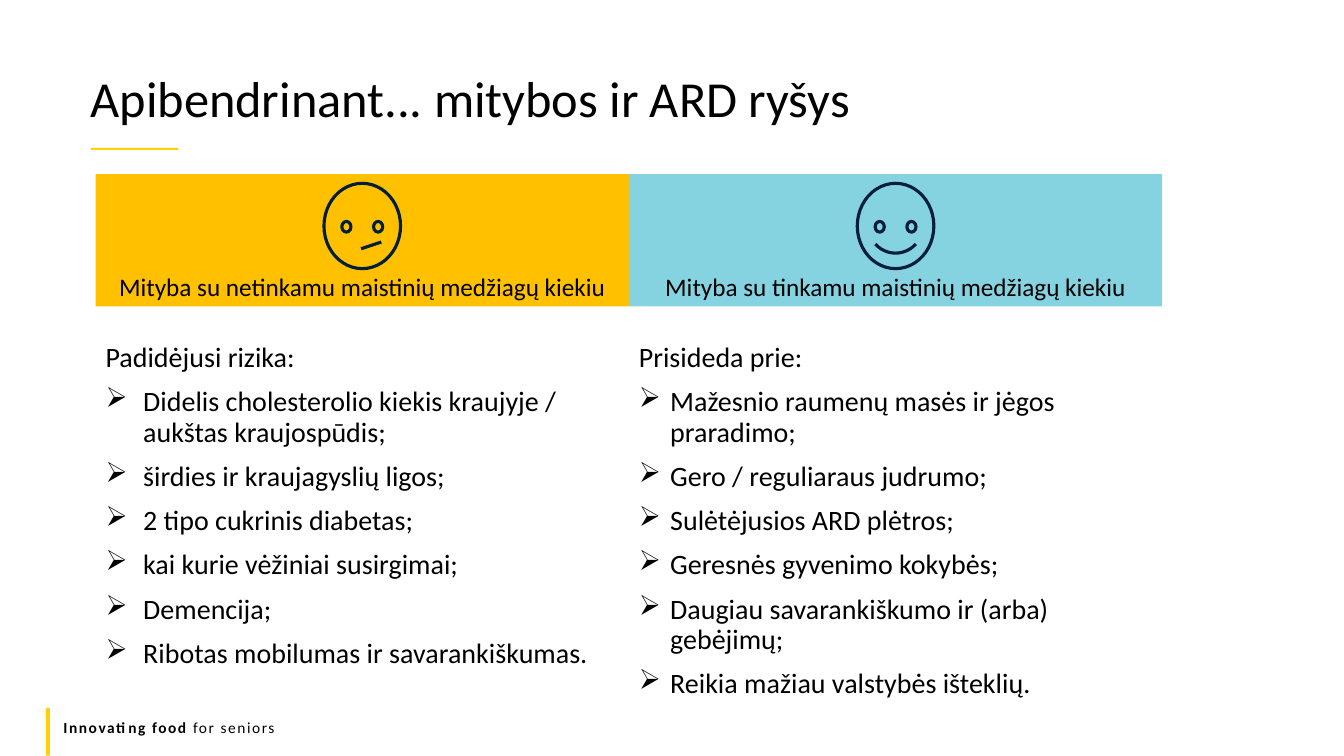
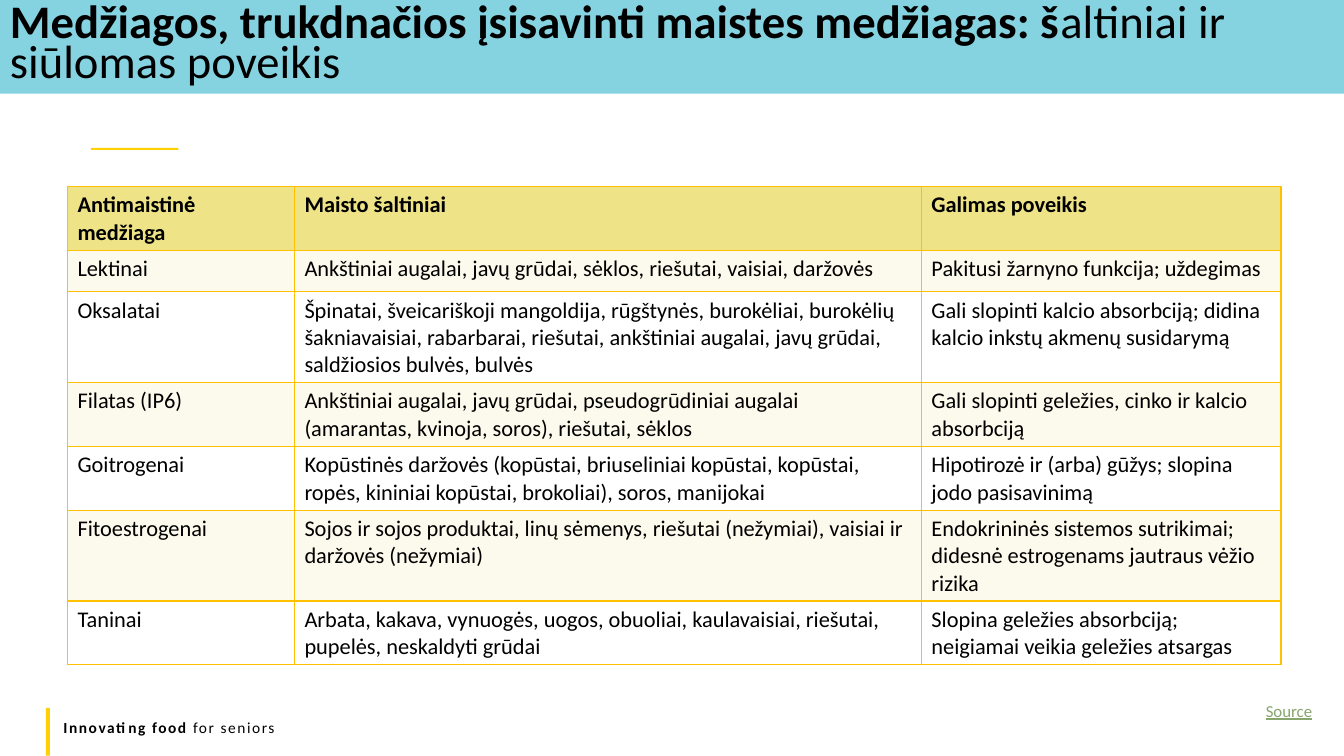
from math import cos, pi, sin

from lxml.etree import SubElement
from pptx import Presentation
from pptx.dml.color import RGBColor
from pptx.enum.shapes import MSO_SHAPE
from pptx.enum.text import MSO_ANCHOR, PP_ALIGN
from pptx.oxml.ns import qn
from pptx.util import Cm, Pt

FONT = "Calibri"
COLORS = {
    "text": "000000", "accent": "FFD100", "amber": "FFC000", "aqua": "85D2E1",
    "ink": "011E3B", "link": "87A66E", "header": "EEE387", "band": "FCFAED",
    "white": "FFFFFF",
}
RGB = {name: RGBColor.from_string(value) for name, value in COLORS.items()}


def add_box(s, box, fill=None, anchor=MSO_ANCHOR.TOP):
    """Add a text box, or a filled rectangle; box is left, top, width, height in cm."""
    box = [Cm(v) for v in box]
    if fill:
        sp = s.shapes.add_shape(MSO_SHAPE.RECTANGLE, *box)
        sp.shadow.inherit = False
        sp.fill.solid()
        sp.fill.fore_color.rgb = RGB[fill]
        sp.line.fill.background()
    else:
        sp = s.shapes.add_textbox(*box)
    sp.text_frame.word_wrap = True
    sp.text_frame.vertical_anchor = anchor
    return sp


def write(p, runs, size, color="text", spacing=None, **layout):
    """Fill a paragraph from (text, run format) pairs; layout sets paragraph attributes."""
    for name, value in {"alignment": PP_ALIGN.LEFT, **layout}.items():
        setattr(p, name, value)
    for text, fmt in runs:
        r = p.add_run()
        r.text = text
        for name, value in {"name": FONT, "size": Pt(size), **fmt}.items():
            setattr(r.font, name, value)
        r.font.color.rgb = RGB[color]
        if spacing:
            r._r.get_or_add_rPr().set("spc", str(spacing))


prs = Presentation()
prs.slide_width, prs.slide_height = Cm(33.87), Cm(19.05)
slides = [prs.slides.add_slide(prs.slide_layouts[6]) for _ in range(2)]

# Shared title rule and footer
for s in slides:
    add_box(s, (2.29, 3.73, 2.21, 0.05), "accent")
    add_box(s, (1.16, 17.84, 0.1, 1.2), "accent")
    footer = add_box(s, (1.35, 17.96, 30.48, 0.74))
    write(footer.text_frame.paragraphs[0],
          [("Innovating food ", {"bold": True}), ("for seniors", {})], 11, spacing=110)

# Slide titles
titles = [
    ((2.03, 1.78, 29.44, 1.63), None, 36, 0.8,
     [("Apibendrinant... mitybos ir ARD ryšys", {})]),
    ((0, 0, 33.87, 2.36), "aqua", 33.3, 0.7,
     [("Medžiagos, trukdnačios įsisavinti maistes medžiagas: š", {"bold": True}),
      ("altiniai ir siūlomas poveikis", {})]),
]
for s, (box, fill, size, line_spacing, runs) in zip(slides, titles):
    title = add_box(s, box, fill, MSO_ANCHOR.MIDDLE)
    write(title.text_frame.paragraphs[0], runs, size, line_spacing=line_spacing)

# Slide 1: two columns, each with a face, a heading and a list
s = slides[0]
COL_LEFT, COL_WIDTH = 2.41, 13.44
skewed_mouth = [(-0.03, 6.27), (0.48, 6.1)]
SMILE_RADIUS, SMILE_CENTRE = 0.68, 5.7
smile_angles = [pi * (0.23 + 0.54 * i / 12) for i in range(13)]
smile = [(SMILE_RADIUS * cos(a), SMILE_CENTRE + SMILE_RADIUS * sin(a)) for a in smile_angles]
columns = [
    ("amber", skewed_mouth, 0.95, "Mityba su netinkamu maistinių medžiagų kiekiu",
     "Padidėjusi rizika:",
     ["Didelis cholesterolio kiekis kraujyje / aukštas kraujospūdis;",
      "širdies ir kraujagyslių ligos;",
      "2 tipo cukrinis diabetas;",
      "kai kurie vėžiniai susirgimai;",
      "Demencija;",
      "Ribotas mobilumas ir savarankiškumas."]),
    ("aqua", smile, 0.79, "Mityba su tinkamu maistinių medžiagų kiekiu",
     "Prisideda prie:",
     ["Mažesnio raumenų masės ir jėgos praradimo;",
      "Gero / reguliaraus judrumo;",
      "Sulėtėjusios ARD plėtros;",
      "Geresnės gyvenimo kokybės;",
      "Daugiau savarankiškumo ir (arba) gebėjimų;",
      "Reikia mažiau valstybės išteklių."]),
]
for i, (fill, mouth, indent, heading, lead, items) in enumerate(columns):
    left = COL_LEFT + i * COL_WIDTH
    centre = left + COL_WIDTH / 2

    header = add_box(s, (left, 4.39, COL_WIDTH, 3.33), fill, MSO_ANCHOR.BOTTOM)
    write(header.text_frame.paragraphs[0], [(heading, {})], 18, alignment=PP_ALIGN.CENTER)

    face = [s.shapes.add_shape(MSO_SHAPE.OVAL, Cm(centre + dx - w / 2), Cm(y), Cm(w), Cm(h))
            for dx, y, w, h in [(0, 4.62, 1.93, 2.15),
                                (-0.4, 5.58, 0.23, 0.27), (0.4, 5.58, 0.23, 0.27)]]
    points = [(Cm(centre + dx), Cm(y)) for dx, y in mouth]
    outline = s.shapes.build_freeform(*points[0])
    outline.add_line_segments(points[1:], close=False)
    face.append(outline.convert_to_shape())
    for sp in face:
        sp.shadow.inherit = False
        sp.fill.background()
        sp.line.color.rgb = RGB["ink"]
        sp.line.width = Pt(2.25)

    tf = add_box(s, (left, 8.53, COL_WIDTH, 9.4)).text_frame
    write(tf.paragraphs[0], [(lead, {})], 20, line_spacing=0.9)
    for item in items:
        p = tf.add_paragraph()
        pPr = p._p.get_or_add_pPr()
        pPr.set("marL", str(Cm(indent)))
        pPr.set("indent", str(-Cm(indent)))
        SubElement(pPr, qn("a:buChar")).set("char", "➢")
        write(p, [(item, {})], 20, line_spacing=0.9, space_before=Pt(10))

# Slide 2: table of antinutrients
s = slides[1]
rows = [
    ("Antimaistinė medžiaga", "Maisto šaltiniai", "Galimas poveikis"),
    ("Lektinai", "Ankštiniai augalai, javų grūdai, sėklos, riešutai, vaisiai, daržovės",
     "Pakitusi žarnyno funkcija; uždegimas"),
    ("Oksalatai",
     "Špinatai, šveicariškoji mangoldija, rūgštynės, burokėliai, burokėlių šakniavaisiai, "
     "rabarbarai, riešutai, ankštiniai augalai, javų grūdai, saldžiosios bulvės, bulvės",
     "Gali slopinti kalcio absorbciją; didina kalcio inkstų akmenų susidarymą"),
    ("Filatas (IP6)",
     "Ankštiniai augalai, javų grūdai, pseudogrūdiniai augalai (amarantas, kvinoja, soros), "
     "riešutai, sėklos",
     "Gali slopinti geležies, cinko ir kalcio absorbciją"),
    ("Goitrogenai",
     "Kopūstinės daržovės (kopūstai, briuseliniai kopūstai, kopūstai, ropės, "
     "kininiai kopūstai, brokoliai), soros, manijokai",
     "Hipotirozė ir (arba) gūžys; slopina jodo pasisavinimą"),
    ("Fitoestrogenai",
     "Sojos ir sojos produktai, linų sėmenys, riešutai (nežymiai), vaisiai ir daržovės "
     "(nežymiai)",
     "Endokrininės sistemos sutrikimai; didesnė estrogenams jautraus vėžio rizika"),
    ("Taninai",
     "Arbata, kakava, vynuogės, uogos, obuoliai, kaulavaisiai, riešutai, pupelės, "
     "neskaldyti grūdai",
     "Slopina geležies absorbciją; neigiamai veikia geležies atsargas"),
]
col_widths = [5.72, 15.8, 9.06]
row_heights = [1.61, 1.04, 2.28, 1.61, 1.61, 2.28, 1.61]
table = s.shapes.add_table(len(rows), len(col_widths), Cm(1.7), Cm(4.7),
                           Cm(sum(col_widths)), Cm(sum(row_heights))).table
for col, width in zip(table.columns, col_widths):
    col.width = Cm(width)
for i, (row, height, texts) in enumerate(zip(table.rows, row_heights, rows)):
    row.height = Cm(height)
    fill = "header" if i == 0 else "band" if i % 2 else "white"
    for cell, text in zip(row.cells, texts):
        tcPr = cell._tc.get_or_add_tcPr()
        for side in "LRTB":
            ln = SubElement(tcPr, qn(f"a:ln{side}"), w=str(Pt(1)))
            SubElement(SubElement(ln, qn("a:solidFill")), qn("a:srgbClr"), val=COLORS["amber"])
        cell.fill.solid()
        cell.fill.fore_color.rgb = RGB[fill]
        write(cell.text_frame.paragraphs[0], [(text, {"bold": i == 0})], 16)

source = add_box(s, (31.65, 17.53, 1.9, 0.76))
write(source.text_frame.paragraphs[0], [("Source", {"underline": True})], 12, "link")

prs.save("out.pptx")
